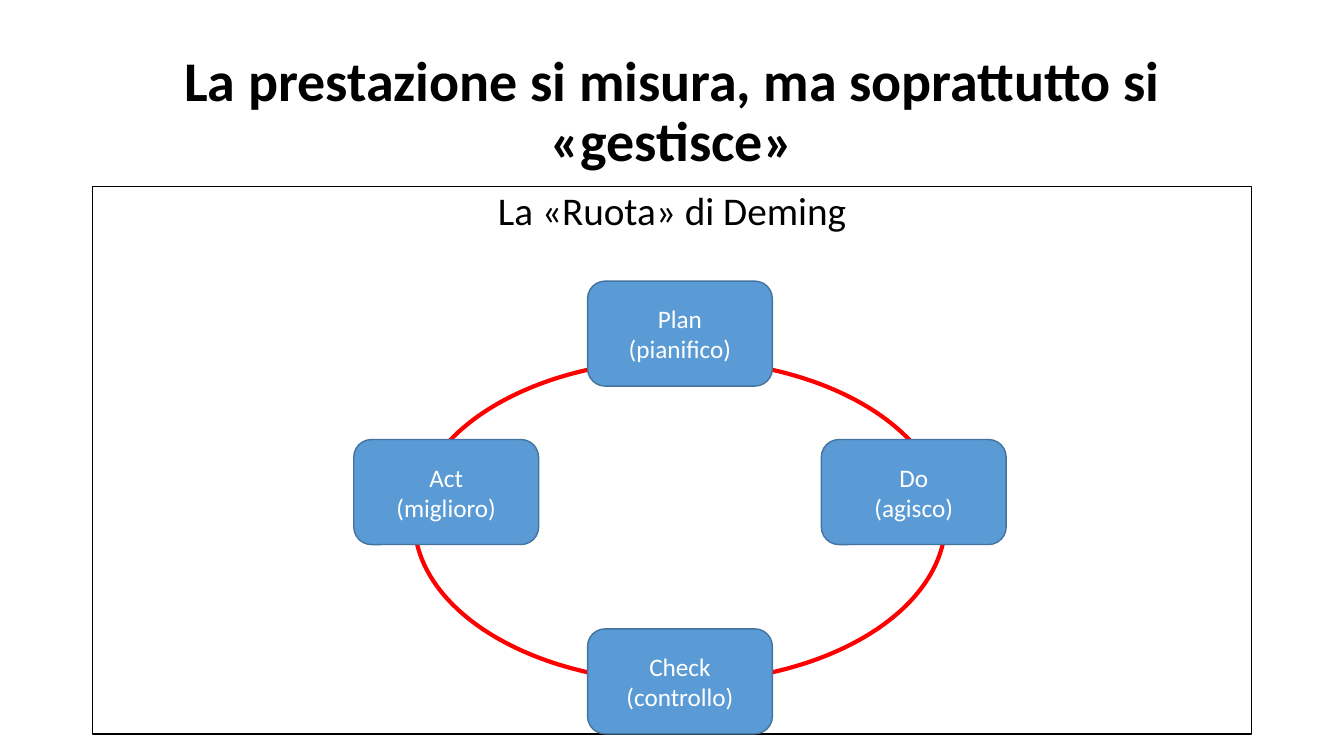
from pptx import Presentation
from pptx.dml.color import RGBColor
from pptx.enum.shapes import MSO_SHAPE
from pptx.enum.text import MSO_ANCHOR, PP_ALIGN
from pptx.util import Pt

RECT, ROUND, OVAL = MSO_SHAPE.RECTANGLE, MSO_SHAPE.ROUNDED_RECTANGLE, MSO_SHAPE.OVAL
TOP, MIDDLE = MSO_ANCHOR.TOP, MSO_ANCHOR.MIDDLE
CENTER = PP_ALIGN.CENTER


def color(code):
    return RGBColor.from_string(code)


def write(frame, text, size=18, ink="000000", bold=False, anchor=MIDDLE,
          font="Calibri", spacing=1.0, before=0):
    frame.word_wrap = True
    frame.vertical_anchor = anchor
    frame.text = text
    for para in frame.paragraphs:
        para.alignment = CENTER
        para.line_spacing = spacing
        para.space_before = Pt(before)
        for run in para.runs:
            run.font.name = font
            run.font.size = Pt(size)
            run.font.bold = bold
            run.font.color.rgb = color(ink)


class Board:
    blue, edge, red = "5B9BD5", "43739E", "FF0000"
    black, white = "000000", "FFFFFF"

    def __init__(self, slide):
        self.shapes = slide.shapes

    def label(self, box, text, **style):
        area = self.shapes.add_textbox(*map(Pt, box))
        write(area.text_frame, text, **style)

    def shape(self, kind, box, fill, line, width=1):
        item = self.shapes.add_shape(kind, *map(Pt, box))
        item.shadow.inherit = False
        if fill:
            item.fill.solid()
            item.fill.fore_color.rgb = color(fill)
        else:
            item.fill.background()
        item.line.color.rgb = color(line)
        item.line.width = Pt(width)
        return item

    def panel(self, box, text, **style):
        item = self.shape(RECT, box, self.white, self.black)
        write(item.text_frame, text, anchor=TOP, **style)

    def ring(self, box):
        self.shape(OVAL, box, None, self.red, 3)

    def step(self, left, top, text):
        item = self.shape(ROUND, (left, top, 132, 75), self.blue, self.edge)
        write(item.text_frame, text, ink=self.white)


def main():
    deck = Presentation()
    deck.slide_width, deck.slide_height = Pt(960), Pt(540)
    board = Board(deck.slides.add_slide(deck.slide_layouts[6]))

    # Title and framed panel
    board.label((66, 28.8, 828, 104.4),
                "La prestazione si misura, ma soprattutto si «gestisce»",
                size=40, bold=True, spacing=0.9)
    board.panel((66, 133.2, 828, 391), "La «Ruota» di Deming",
                size=28, spacing=0.9, before=10)

    # Wheel with its four steps
    board.ring((296, 257, 379.4, 230.4))
    mid, row, reach = 419.7, 314, 167
    for left, top, text in (
        (mid + reach, row, "Do\n(agisco)"),
        (mid, 200.8, "Plan\n(pianifico)"),
        (mid, 449.2, "Check\n(controllo)"),
        (mid - reach, row, "Act\n(miglioro)"),
    ):
        board.step(left, top, text)

    deck.save("out.pptx")


if __name__ == "__main__":
    main()
